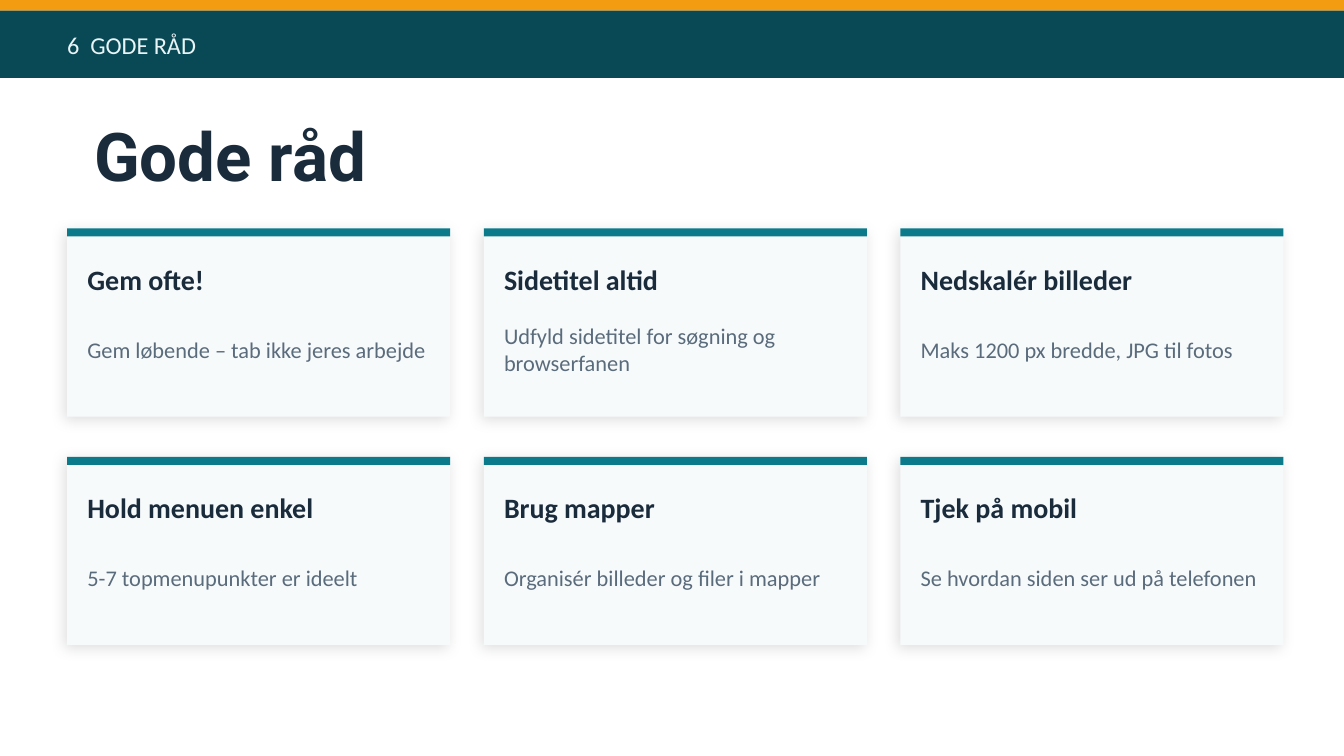
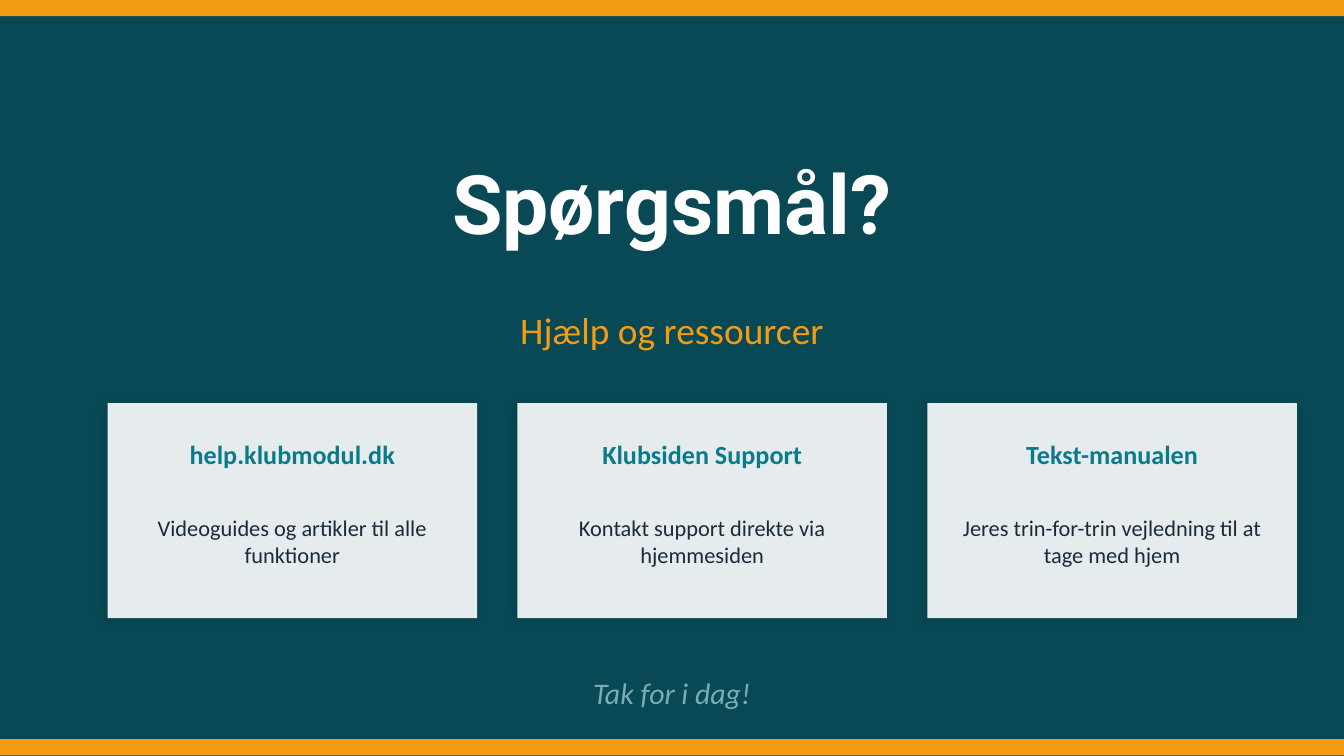
"""Build the advice slide and the closing questions slide."""
from dataclasses import dataclass
from typing import NamedTuple

from lxml import etree
from pptx import Presentation
from pptx.dml.color import RGBColor
from pptx.enum.shapes import MSO_SHAPE
from pptx.enum.text import MSO_ANCHOR, PP_ALIGN
from pptx.oxml.ns import qn
from pptx.util import Inches, Pt

RECT = MSO_SHAPE.RECTANGLE
MIDDLE = MSO_ANCHOR.MIDDLE
LEFT, CENTER = PP_ALIGN.LEFT, PP_ALIGN.CENTER

CELL = Inches(0.1)
COLS, ROWS = 100, 56.25

WHITE = RGBColor(0xFF, 0xFF, 0xFF)
BLACK = RGBColor(0x00, 0x00, 0x00)
ORANGE = RGBColor(0xF3, 0x9C, 0x12)
PETROL = RGBColor(0x08, 0x49, 0x55)
TEAL = RGBColor(0x0B, 0x7A, 0x8A)
MIST = RGBColor(0x7A, 0xAC, 0xB5)
ICE = RGBColor(0xE8, 0xF4, 0xF6)
PALE = RGBColor(0xF7, 0xFA, 0xFB)
INK = RGBColor(0x1A, 0x2B, 0x3C)
SLATE = RGBColor(0x5A, 0x6B, 0x7C)


class Box(NamedTuple):
    col: float
    row: float
    cols: float
    rows: float

    def emu(self) -> list[int]:
        return [round(v * CELL) for v in self]

    def within(self, part: "Box") -> "Box":
        return Box(self.col + part.col, self.row + part.row, part.cols, part.rows)


class Style(NamedTuple):
    size: float
    color: RGBColor
    name: str = "Calibri"
    bold: bool = False
    italic: bool = False
    align: PP_ALIGN = LEFT


class Card(NamedTuple):
    heading: str
    body: str


@dataclass(frozen=True)
class CardGrid:
    first: Box
    gap_cols: float
    gap_rows: float
    fill: RGBColor
    opacity: int
    bar_rows: float
    heading_box: Box
    heading: Style
    body_box: Box
    body: Style
    per_row: int = 3

    def place(self, index: int) -> Box:
        row, col = divmod(index, self.per_row)
        x, y, w, h = self.first
        return Box(x + col * (w + self.gap_cols), y + row * (h + self.gap_rows), w, h)


TITLE = Style(36, INK, "Roboto", bold=True)
BIG_TITLE = TITLE._replace(size=44, color=WHITE, align=CENTER)
SECTION = Style(13, ICE)
SUBTITLE = Style(20, ORANGE, align=CENTER)
THANKS = Style(16, MIST, italic=True, align=CENTER)

ADVICE_GRID = CardGrid(
    first=Box(5, 17, 28.5, 14), gap_cols=2.5, gap_rows=3,
    fill=PALE, opacity=100, bar_rows=0.6,
    heading_box=Box(1.5, 2, 25.5, 3.5), heading=Style(15, INK, bold=True),
    body_box=Box(1.5, 6, 25.5, 6), body=Style(12, SLATE),
)
HELP_GRID = CardGrid(
    first=Box(8, 30, 27.5, 16), gap_cols=3, gap_rows=3,
    fill=WHITE, opacity=90, bar_rows=0,
    heading_box=Box(1.5, 1.5, 24.5, 4.5),
    heading=Style(14, TEAL, bold=True, align=CENTER),
    body_box=Box(1.5, 6.5, 24.5, 7.5), body=Style(12, INK, align=CENTER),
)

ADVICE = [
    Card("Gem ofte!", "Gem løbende – tab ikke jeres arbejde"),
    Card("Sidetitel altid", "Udfyld sidetitel for søgning og browserfanen"),
    Card("Nedskalér billeder", "Maks 1200 px bredde, JPG til fotos"),
    Card("Hold menuen enkel", "5-7 topmenupunkter er ideelt"),
    Card("Brug mapper", "Organisér billeder og filer i mapper"),
    Card("Tjek på mobil", "Se hvordan siden ser ud på telefonen"),
]
HELP = [
    Card("help.klubmodul.dk", "Videoguides og artikler til alle funktioner"),
    Card("Klubsiden Support", "Kontakt support direkte via hjemmesiden"),
    Card("Tekst-manualen", "Jeres trin-for-trin vejledning til at tage med hjem"),
]


def new_slide(prs, color: RGBColor):
    s = prs.slides.add_slide(prs.slide_layouts[6])
    s.background.fill.solid()
    s.background.fill.fore_color.rgb = color
    return s


def add_rect(s, box: Box, color: RGBColor):
    sp = s.shapes.add_shape(RECT, *box.emu())
    sp.shadow.inherit = False
    sp.fill.solid()
    sp.fill.fore_color.rgb = color
    sp.line.fill.background()
    return sp


def add_band(s, row: float, rows: float, color: RGBColor) -> None:
    add_rect(s, Box(0, row, COLS, rows), color)


def add_text(s, box: Box, text: str, style: Style) -> None:
    tf = s.shapes.add_textbox(*box.emu()).text_frame
    frame = {"word_wrap": True, "vertical_anchor": MIDDLE, "margin_left": 0,
             "margin_right": 0, "margin_top": 0, "margin_bottom": 0}
    for key, value in frame.items():
        setattr(tf, key, value)
    p = tf.paragraphs[0]
    p.alignment = style.align
    r = p.add_run()
    r.text = text
    font = {"size": Pt(style.size), "name": style.name,
            "bold": style.bold, "italic": style.italic}
    for key, value in font.items():
        setattr(r.font, key, value)
    r.font.color.rgb = style.color


def set_alpha(color, percent: int) -> None:
    etree.SubElement(color, qn("a:alpha"), val=str(percent * 1000))


def add_shadow(sp) -> None:
    effects = sp._element.spPr.find(qn("a:effectLst"))
    shadow = etree.SubElement(
        effects, qn("a:outerShdw"), blurRad=str(Pt(8)), dist=str(Pt(2)),
        dir=str(135 * 60000), algn="bl", rotWithShape="0")
    set_alpha(etree.SubElement(shadow, qn("a:srgbClr"), val=str(BLACK)), 12)


def add_cards(s, grid: CardGrid, cards: list[Card]) -> None:
    for i, card in enumerate(cards):
        box = grid.place(i)
        sp = add_rect(s, box, grid.fill)
        add_shadow(sp)
        if grid.opacity < 100:
            fill = sp._element.spPr.find(qn("a:solidFill"))
            set_alpha(fill[0], grid.opacity)
        if grid.bar_rows:
            add_rect(s, box._replace(rows=grid.bar_rows), TEAL)
        add_text(s, box.within(grid.heading_box), card.heading, grid.heading)
        add_text(s, box.within(grid.body_box), card.body, grid.body)


def build_advice(prs) -> None:
    s = new_slide(prs, WHITE)
    add_band(s, 0, 0.8, ORANGE)
    add_band(s, 0.8, 5, PETROL)
    add_text(s, Box(5, 0.8, 90, 5), "6  GODE RÅD", SECTION)
    add_text(s, Box(7, 8, 86, 7), "Gode råd", TITLE)
    add_cards(s, ADVICE_GRID, ADVICE)


def build_questions(prs) -> None:
    s = new_slide(prs, PETROL)
    for row in (0, 55):
        add_band(s, row, 1.2, ORANGE)
    add_text(s, Box(8, 10, 84, 10), "Spørgsmål?", BIG_TITLE)
    add_text(s, Box(8, 22, 84, 5), "Hjælp og ressourcer", SUBTITLE)
    add_cards(s, HELP_GRID, HELP)
    add_text(s, Box(8, 49, 84, 5), "Tak for i dag!", THANKS)


def main() -> None:
    prs = Presentation()
    prs.slide_width, prs.slide_height = round(COLS * CELL), round(ROWS * CELL)
    build_advice(prs)
    build_questions(prs)
    prs.save("out.pptx")


if __name__ == "__main__":
    main()
